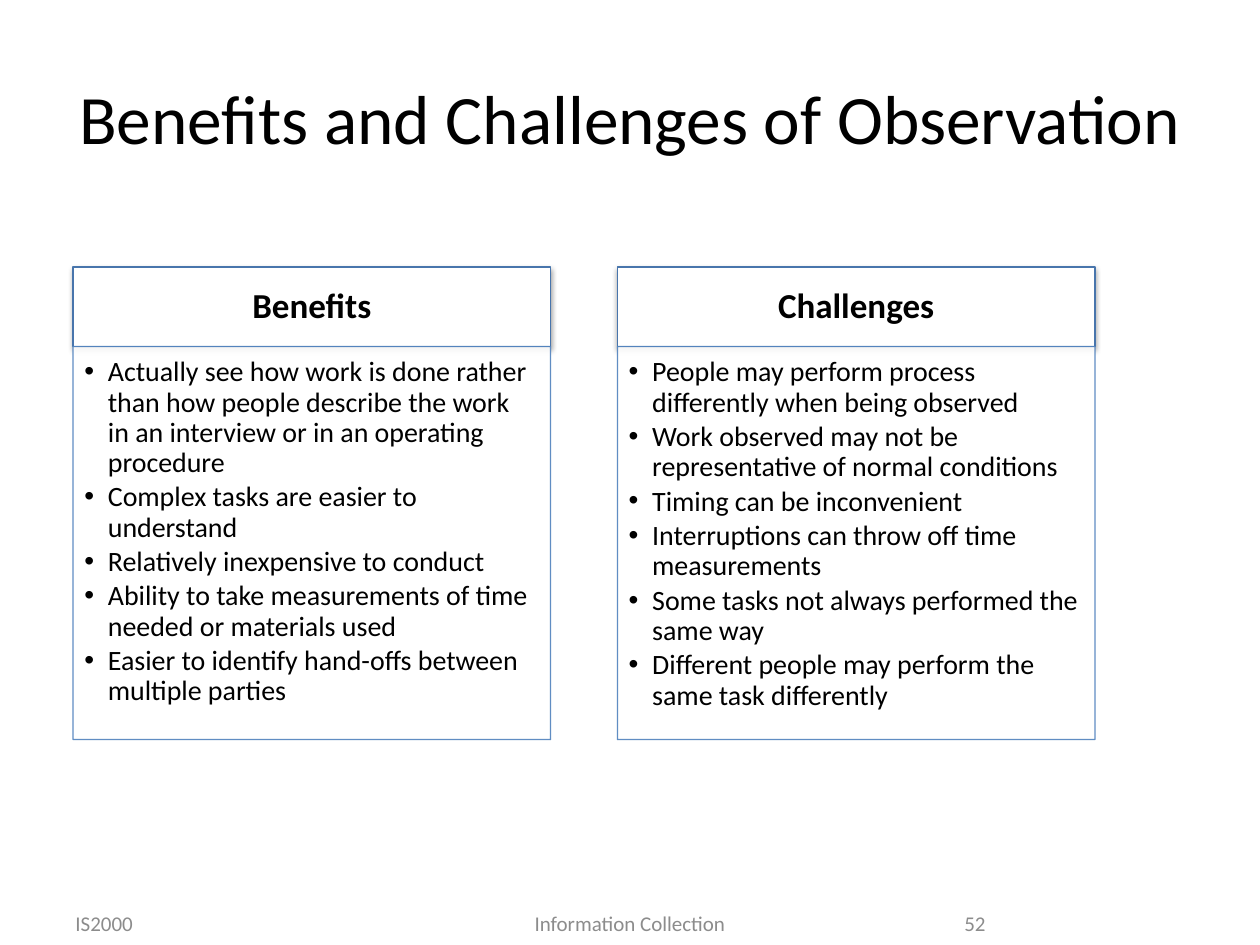
"""Build a slide comparing the benefits and challenges of observation."""
from dataclasses import dataclass

from lxml import etree
from pptx import Presentation
from pptx.dml.color import RGBColor
from pptx.enum.shapes import MSO_SHAPE
from pptx.enum.text import MSO_ANCHOR, PP_ALIGN
from pptx.oxml.ns import qn
from pptx.util import Pt

RECT = MSO_SHAPE.RECTANGLE
TOP, MIDDLE = MSO_ANCHOR.TOP, MSO_ANCHOR.MIDDLE
LEFT, CENTER, RIGHT = PP_ALIGN.LEFT, PP_ALIGN.CENTER, PP_ALIGN.RIGHT
COLORS = {
    "text": "000000",
    "footer": "8C8C8C",
    "fill": "FFFFFF",
    "head_line": "4875AC",
    "body_line": "4F81BD",
}
PANEL_TOP, PANEL_W, HEAD_H, BODY_H = 152.64, 272.88, 45.36, 224.64
PANEL_LEFT, PANEL_STEP = 41.76, 311.04
HEAD_INSETS = (11.2, 6.4, 11.2, 6.4)
BODY_INSETS = (6.4, 6.4, 8.5, 9.6)
BULLET_INDENT = 13.5


@dataclass
class Label:
    text: str
    box: tuple[float, float, float, float]
    size: float
    color: str
    align: PP_ALIGN


@dataclass
class Panel:
    heading: str
    points: list[str]


LABELS = [
    Label("Benefits and Challenges of Observation", (36, 21.6, 648, 90), 39.6, "text", CENTER),
    Label("IS2000", (36, 516.24, 167.76, 22.32), 12, "footer", LEFT),
    Label("Information Collection", (221.04, 516.24, 277.92, 22.32), 12, "footer", CENTER),
    Label("52", (516.24, 516.24, 54, 22.32), 12, "footer", RIGHT),
]
PANELS = [
    Panel("Benefits", [
        "Actually see how work is done rather than how people describe the work "
        "in an interview or in an operating procedure",
        "Complex tasks are easier to understand",
        "Relatively inexpensive to conduct",
        "Ability to take measurements of time needed or materials used",
        "Easier to identify hand-offs between multiple parties",
    ]),
    Panel("Challenges", [
        "People may perform process differently when being observed",
        "Work observed may not be representative of normal conditions",
        "Timing can be inconvenient",
        "Interruptions can throw off time measurements",
        "Some tasks not always performed the same way",
        "Different people may perform the same task differently",
    ]),
]


def rgb(name: str) -> RGBColor:
    """Return the named colour."""
    return RGBColor.from_string(COLORS[name])


def apply(target, **values) -> None:
    """Set each given attribute on the target."""
    for name, value in values.items():
        setattr(target, name, value)


def set_frame(tf, anchor, insets=(7.2, 3.6, 7.2, 3.6)) -> None:
    """Set wrapping, anchor and insets of a text frame."""
    sides = ("margin_left", "margin_top", "margin_right", "margin_bottom")
    apply(tf, word_wrap=True, vertical_anchor=anchor,
          **{side: Pt(inset) for side, inset in zip(sides, insets)})


def write(p, text: str, size: float, color: str, align, bold: bool = False) -> None:
    """Write one formatted run into a paragraph."""
    p.alignment = align
    r = p.add_run()
    r.text = text
    apply(r.font, name="Calibri", size=Pt(size), bold=bold)
    r.font.color.rgb = rgb(color)


def add_alpha(fill_parent, percent: int) -> None:
    """Make a solid fill partly transparent."""
    color = fill_parent.find(qn("a:solidFill"))[0]
    etree.SubElement(color, qn("a:alpha"), val=str(percent * 1000))


def add_shadow(sp) -> None:
    """Give a shape a soft shadow below it."""
    effects = sp._element.spPr.find(qn("a:effectLst"))
    shadow = etree.SubElement(
        effects, qn("a:outerShdw"), blurRad=str(Pt(3.1)), dist=str(Pt(1.6)),
        dir="5400000", rotWithShape="0")
    color = etree.SubElement(shadow, qn("a:srgbClr"), val=COLORS["text"])
    etree.SubElement(color, qn("a:alpha"), val="38000")


def add_bullet(p) -> None:
    """Give a paragraph a hanging bullet."""
    pPr = p._p.get_or_add_pPr()
    pPr.set("marL", str(Pt(BULLET_INDENT)))
    pPr.set("indent", str(Pt(-BULLET_INDENT)))
    etree.SubElement(pPr, qn("a:buFont"), typeface="Arial")
    etree.SubElement(pPr, qn("a:buChar"), char="•")


def add_rect(s, x: float, y: float, h: float, line: str):
    """Draw one outlined panel rectangle."""
    sp = s.shapes.add_shape(RECT, Pt(x), Pt(y), Pt(PANEL_W), Pt(h))
    sp.shadow.inherit = False
    sp.fill.solid()
    sp.fill.fore_color.rgb = rgb("fill")
    sp.line.color.rgb = rgb(line)
    sp.line.width = Pt(0.75)
    return sp


def add_label(s, label: Label) -> None:
    """Draw a title or footer text box."""
    tf = s.shapes.add_textbox(*map(Pt, label.box)).text_frame
    set_frame(tf, MIDDLE)
    write(tf.paragraphs[0], label.text, label.size, label.color, label.align)


def add_panel(s, panel: Panel, x: float) -> None:
    """Draw a heading with its bulleted list below."""
    head = add_rect(s, x, PANEL_TOP, HEAD_H, "head_line")
    add_shadow(head)
    set_frame(head.text_frame, MIDDLE, HEAD_INSETS)
    p = head.text_frame.paragraphs[0]
    apply(p, line_spacing=0.9, space_after=Pt(7))
    write(p, panel.heading, 20, "text", CENTER, bold=True)

    body = add_rect(s, x, PANEL_TOP + HEAD_H, BODY_H, "body_line")
    spPr = body._element.spPr
    for fill_parent in (spPr, spPr.find(qn("a:ln"))):
        add_alpha(fill_parent, 90)
    tf = body.text_frame
    set_frame(tf, TOP, BODY_INSETS)
    for i, text in enumerate(panel.points):
        p = tf.add_paragraph() if i else tf.paragraphs[0]
        add_bullet(p)
        apply(p, line_spacing=0.9, space_after=Pt(2.4))
        write(p, text, 16, "text", LEFT)


def main() -> None:
    """Build and save the slide."""
    prs = Presentation()
    apply(prs, slide_width=Pt(720), slide_height=Pt(540))
    s = prs.slides.add_slide(prs.slide_layouts[6])
    for label in LABELS:
        add_label(s, label)
    for i, panel in enumerate(PANELS):
        add_panel(s, panel, PANEL_LEFT + i * PANEL_STEP)
    prs.save("out.pptx")


if __name__ == "__main__":
    main()
